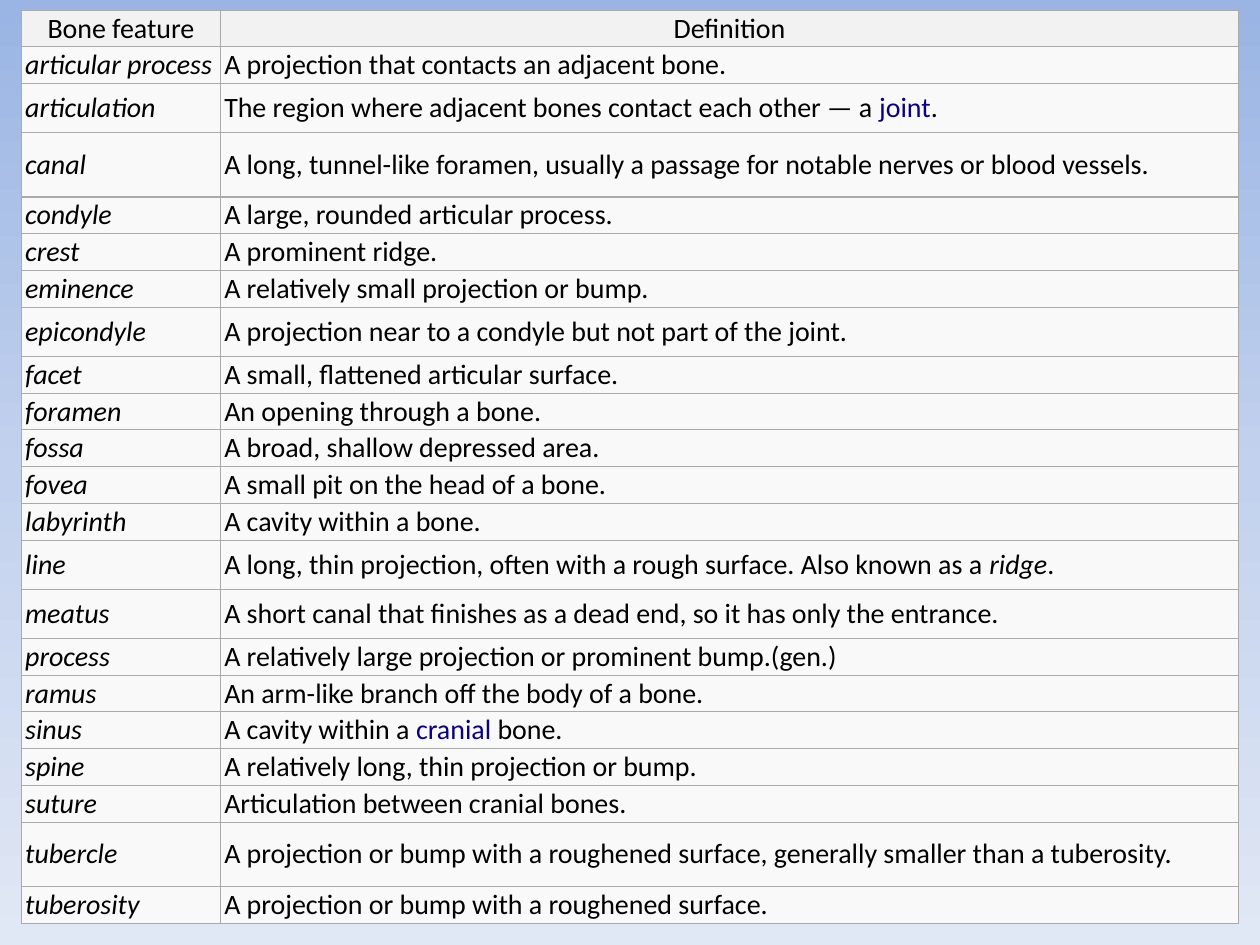
"""Build a one-slide glossary table of bone features."""
import copy

import pptx
import pptx.dml.color
import pptx.enum.text
import pptx.oxml
import pptx.oxml.ns
import pptx.util

Inches = pptx.util.Inches
COLORS = {
    "top": "9AB5E4", "middle": "C2D1ED", "bottom": "E1E8F5",
    "header": "F2F2F2", "body": "F9F9F9", "border": "AAAAAA",
    "text": "000000", "term": "0B0080",
}
SHORT, NORMAL, TALL, TALLEST = 0.15, 0.27, 0.39, 0.51
FEATURES = [
    (NORMAL, "articular process", ["A projection that contacts an adjacent bone."]),
    (TALL, "articulation",
     ["The region where adjacent bones contact each other — a ", ("joint", {"color": "term"}), "."]),
    (TALLEST, "canal",
     ["A long, tunnel-like foramen, usually a passage for notable nerves or blood vessels."]),
    (NORMAL, "condyle", ["A large, rounded articular process."]),
    (SHORT, "crest", ["A prominent ridge."]),
    (NORMAL, "eminence", ["A relatively small projection or bump."]),
    (TALL, "epicondyle", ["A projection near to a condyle but not part of the joint."]),
    (NORMAL, "facet", ["A small, flattened articular surface."]),
    (SHORT, "foramen", ["An opening through a bone."]),
    (NORMAL, "fossa", ["A broad, shallow depressed area."]),
    (NORMAL, "fovea", ["A small pit on the head of a bone."]),
    (SHORT, "labyrinth", ["A cavity within a bone."]),
    (TALL, "line",
     ["A long, thin projection, often with a rough surface. Also known as a ",
      ("ridge", {"italic": True}), "."]),
    (TALL, "meatus", ["A short canal that finishes as a dead end, so it has only the entrance."]),
    (NORMAL, "process", ["A relatively large projection or prominent bump.(gen.)"]),
    (NORMAL, "ramus", ["An arm-like branch off the body of a bone."]),
    (NORMAL, "sinus", ["A cavity within a ", ("cranial", {"color": "term"}), " bone."]),
    (NORMAL, "spine", ["A relatively long, thin projection or bump."]),
    (NORMAL, "suture", ["Articulation between cranial bones."]),
    (TALLEST, "tubercle",
     ["A projection or bump with a roughened surface, generally smaller than a tuberosity."]),
    (NORMAL, "tuberosity", ["A projection or bump with a roughened surface."]),
]


def add_text(para, text, *, italic=False, color="text"):
    span = para.add_run()
    span.text = text
    span.font.name = "Calibri"
    span.font.size = pptx.util.Pt(16)
    span.font.italic = italic
    span.font.color.rgb = pptx.dml.color.RGBColor.from_string(COLORS[color])


def style_cell(cell, color):
    cell.vertical_anchor = pptx.enum.text.MSO_ANCHOR.MIDDLE
    cell.margin_left = cell.margin_right = Inches(0.03)
    cell.margin_top = cell.margin_bottom = Inches(0.01)
    properties = cell._tc.get_or_add_tcPr()
    for side in "LRTB":
        properties.append(pptx.oxml.parse_xml(
            f'<a:ln{side} {pptx.oxml.ns.nsdecls("a")} w="{pptx.util.Pt(0.75)}"><a:solidFill>'
            f'<a:srgbClr val="{COLORS["border"]}"/></a:solidFill></a:ln{side}>'))
    cell.fill.solid()
    cell.fill.fore_color.rgb = pptx.dml.color.RGBColor.from_string(COLORS[color])


deck = pptx.Presentation()
deck.slide_width, deck.slide_height = Inches(10), Inches(7.5)
page = deck.slides.add_slide(deck.slide_layouts[6])

backdrop = page.background.fill
backdrop.gradient()
backdrop.gradient_angle = 270
stop_list = page.element.find(".//" + pptx.oxml.ns.qn("a:gsLst"))
stop_list.append(copy.deepcopy(stop_list[0]))
for stop, position, name in zip(backdrop.gradient_stops, (0, 0.5, 1), ("top", "middle", "bottom")):
    stop.position = position
    stop.color.rgb = pptx.dml.color.RGBColor.from_string(COLORS[name])

frame = page.shapes.add_table(
    len(FEATURES) + 1, 2, Inches(0.17), Inches(0.08), Inches(9.66), Inches(7.26))
table = frame.table
table.first_row = table.horz_banding = False
for column, width in zip(table.columns, (1.58, 8.08)):
    column.width = Inches(width)

table.rows[0].height = Inches(SHORT)
for cell, title in zip(table.rows[0].cells, ("Bone feature", "Definition")):
    style_cell(cell, "header")
    para = cell.text_frame.paragraphs[0]
    para.alignment = pptx.enum.text.PP_ALIGN.CENTER
    add_text(para, title)

for row, (height, feature, definition) in zip(list(table.rows)[1:], FEATURES):
    row.height = Inches(height)
    for cell, pieces in zip(row.cells, ([(feature, {"italic": True})], definition)):
        style_cell(cell, "body")
        for piece in pieces:
            text, look = (piece, {}) if isinstance(piece, str) else piece
            add_text(cell.text_frame.paragraphs[0], text, **look)
frame.height = Inches(7.26)

deck.save("out.pptx")
